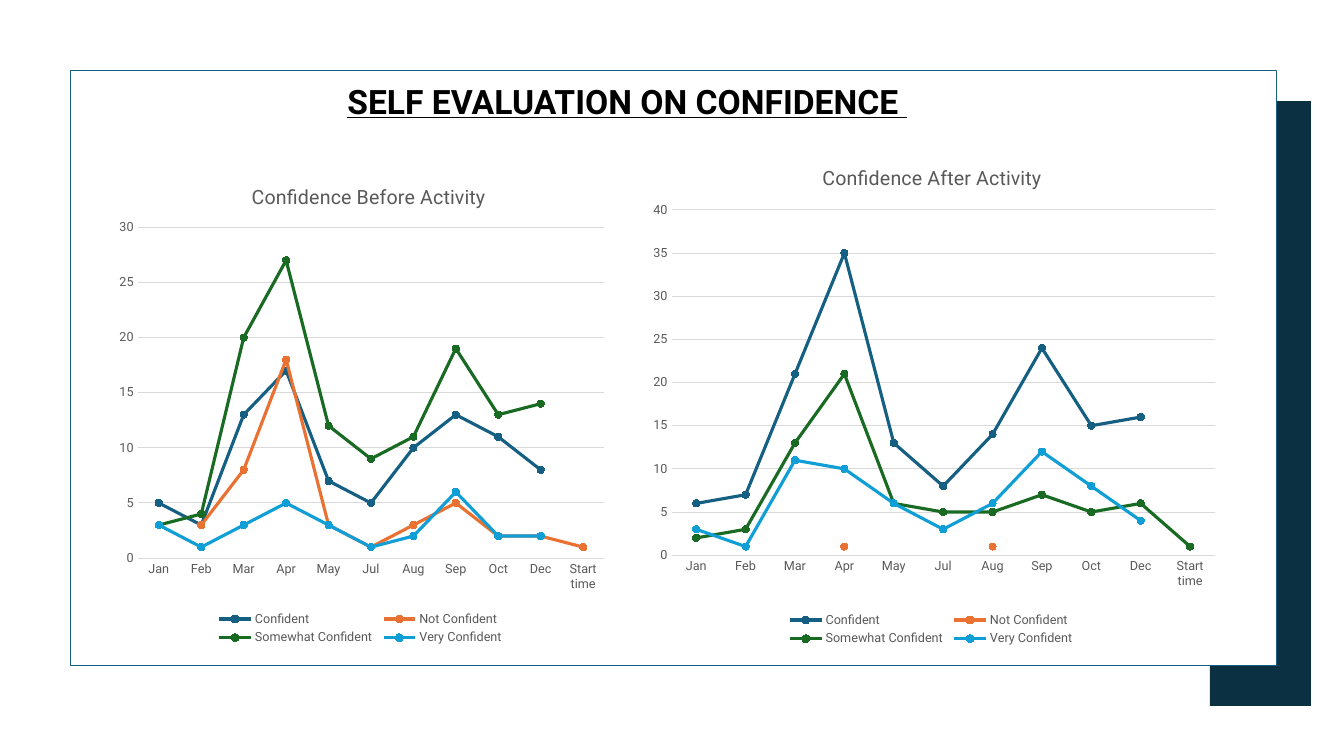
from pptx import Presentation
from pptx import util as u
from pptx.chart.data import CategoryChartData
from pptx.dml.color import RGBColor
from pptx.enum import chart as ch, text
from pptx.enum.shapes import MSO_SHAPE
from pptx.oxml import parse_xml
from pptx.oxml.ns import nsdecls, qn

BLACK = RGBColor(0x00, 0x00, 0x00)
WHITE = RGBColor(0xFF, 0xFF, 0xFF)
GRAY = RGBColor(0x59, 0x59, 0x59)
PALE = RGBColor(0xD9, 0xD9, 0xD9)
BLUE = RGBColor(0x15, 0x60, 0x82)
RUST = RGBColor(0xE9, 0x71, 0x32)
GREEN = RGBColor(0x19, 0x6B, 0x24)
SKY = RGBColor(0x0F, 0x9E, 0xD5)
TEAL = RGBColor(0x10, 0x48, 0x62)
DARK = RGBColor(0x0B, 0x30, 0x41)
FACE = "Roboto"


def write(frame, words, size=14, color=GRAY, bold=False, line=False):
    para = frame.paragraphs[0]
    para.alignment = text.PP_ALIGN.CENTER
    run = para.add_run()
    run.text = words
    font = run.font
    font.name, font.size, font.bold, font.underline = FACE, u.Pt(size), bold, line
    font.color.rgb = color


def place(node, index, inner=False, **share):
    old = node.find(qn("c:layout"))
    if old is not None:
        node.remove(old)
    parts = '<c:layoutTarget val="inner"/>' if inner else ""
    parts += "".join(f'<c:{key}Mode val="edge"/>' for key in "xy")
    parts += "".join(f'<c:{key} val="{val:.3f}"/>' for key, val in share.items())
    node.insert(index, parse_xml(
        f'<c:layout {nsdecls("c")}><c:manualLayout>{parts}</c:manualLayout></c:layout>'))


deck = Presentation()
deck.slide_width, deck.slide_height = u.Inches(13.33), u.Inches(7.5)
slide = deck.slides.add_slide(deck.slide_layouts[6])
items = slide.shapes

folds = [
    (TEAL, [(12.93, 7.42), (12.16, 6.89), (12.16, 1), (12.93, 1.53)]),
    (DARK, [(12.62, 6.61), (12.16, 6.9), (12.16, 1), (12.62, 0.7)]),
]
for color, spots in folds:
    pen = items.build_freeform(*spots[0], scale=u.Inches(1))
    pen.add_line_segments(spots[1:], close=True)
    fold = pen.convert_to_shape()
    fold.shadow.inherit = False
    fold.fill.solid()
    fold.fill.fore_color.rgb = color
    fold.line.fill.background()

panel = items.add_shape(MSO_SHAPE.RECTANGLE, *map(u.Inches, (0.7, 0.7, 11.96, 5.9)))
panel.shadow.inherit = False
panel.fill.solid()
panel.fill.fore_color.rgb = WHITE
panel.line.color.rgb = BLUE
panel.line.width = u.Pt(1)

head = items.add_textbox(*map(u.Inches, (2.67, 0.75, 7.1, 0.5))).text_frame
head.word_wrap = True
write(head, "SELF EVALUATION ON CONFIDENCE ", size=24, color=BLACK, bold=True, line=True)

months = ["Jan", "Feb", "Mar", "Apr", "May", "Jul", "Aug", "Sep", "Oct", "Dec", "Start time"]
levels = [("Confident ", BLUE), ("Not Confident ", RUST),
          ("Somewhat Confident ", GREEN), ("Very Confident ", SKY)]
graphs = [
    ("Confidence Before Activity", (1.09, 1.59, 5, 4.85), 30, [
        [5, 3, 13, 17, 7, 5, 10, 13, 11, 8, None],
        [None, 3, 8, 18, 3, 1, 3, 5, 2, 2, 1],
        [3, 4, 20, 27, 12, 9, 11, 19, 13, 14, None],
        [3, 1, 3, 5, 3, 1, 2, 6, 2, 2, None]]),
    ("Confidence After Activity", (6.34, 1.39, 5.82, 5.06), 40, [
        [6, 7, 21, 35, 13, 8, 14, 24, 15, 16, None],
        [None, None, None, 1, None, None, 1, None, None, None, None],
        [2, 3, 13, 21, 6, 5, 5, 7, 5, 6, 1],
        [3, 1, 11, 10, 6, 3, 6, 12, 8, 4, None]]),
]

for title, box, top, rows in graphs:
    data = CategoryChartData()
    data.categories = months
    for (name, _), row in zip(levels, rows):
        data.add_series(name, row)
    graph = items.add_chart(ch.XL_CHART_TYPE.LINE_MARKERS, *map(u.Inches, box), data).chart
    graph.font.name, graph.font.size = FACE, u.Pt(10)
    graph.font.color.rgb = BLACK

    graph.has_title = True
    write(graph.chart_title.text_frame, title)
    place(graph.chart_title._element, 1, x=0.5 - 1.13 / box[2], y=0.04)
    place(graph.element.find(".//" + qn("c:plotArea")), 0, inner=True,
          x=0.055, y=0.137, w=0.926, h=0.677)

    graph.has_legend = True
    graph.legend.position = ch.XL_LEGEND_POSITION.BOTTOM
    graph.legend.include_in_layout = False
    cats, vals = graph.category_axis, graph.value_axis
    for axis in (cats, vals):
        axis.major_tick_mark = axis.minor_tick_mark = ch.XL_TICK_MARK.NONE
    for font in (cats.tick_labels.font, vals.tick_labels.font, graph.legend.font):
        font.name, font.size = FACE, u.Pt(9)
        font.color.rgb = GRAY
    vals.minimum_scale, vals.maximum_scale, vals.major_unit = 0, top, 5
    vals.format.line.fill.background()
    for rule in (cats.format.line, vals.major_gridlines.format.line):
        rule.color.rgb = PALE
        rule.width = u.Pt(0.75)

    plot = graph.plots[0]
    plot.vary_by_categories = False
    for line, (_, color) in zip(plot.series, levels):
        line.smooth = False
        line.format.line.color.rgb = color
        line.format.line.width = u.Pt(2.25)
        mark = line.marker
        mark.style, mark.size = ch.XL_MARKER_STYLE.CIRCLE, 5
        mark.format.fill.solid()
        mark.format.fill.fore_color.rgb = color
        mark.format.line.color.rgb = color

deck.save("out.pptx")
